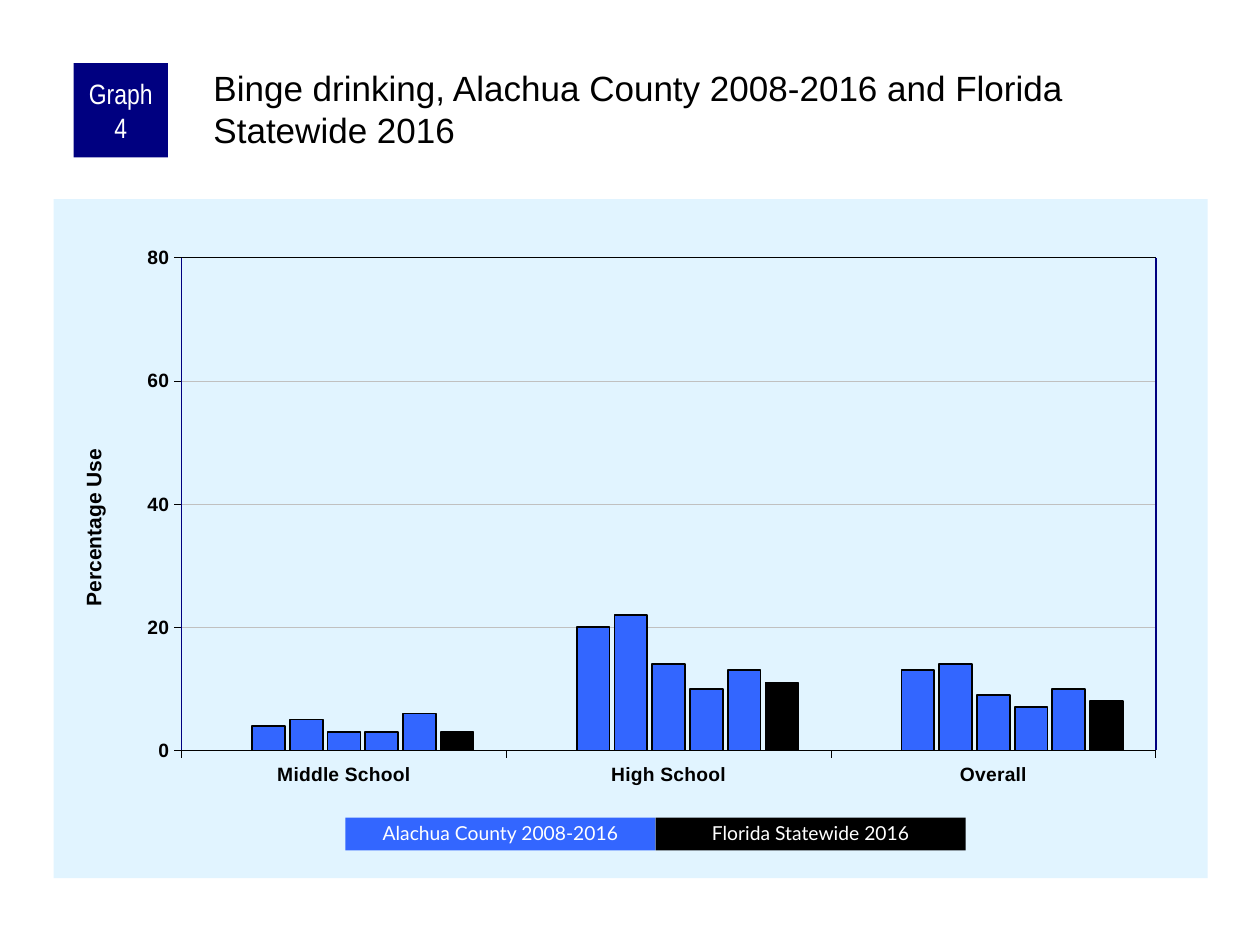
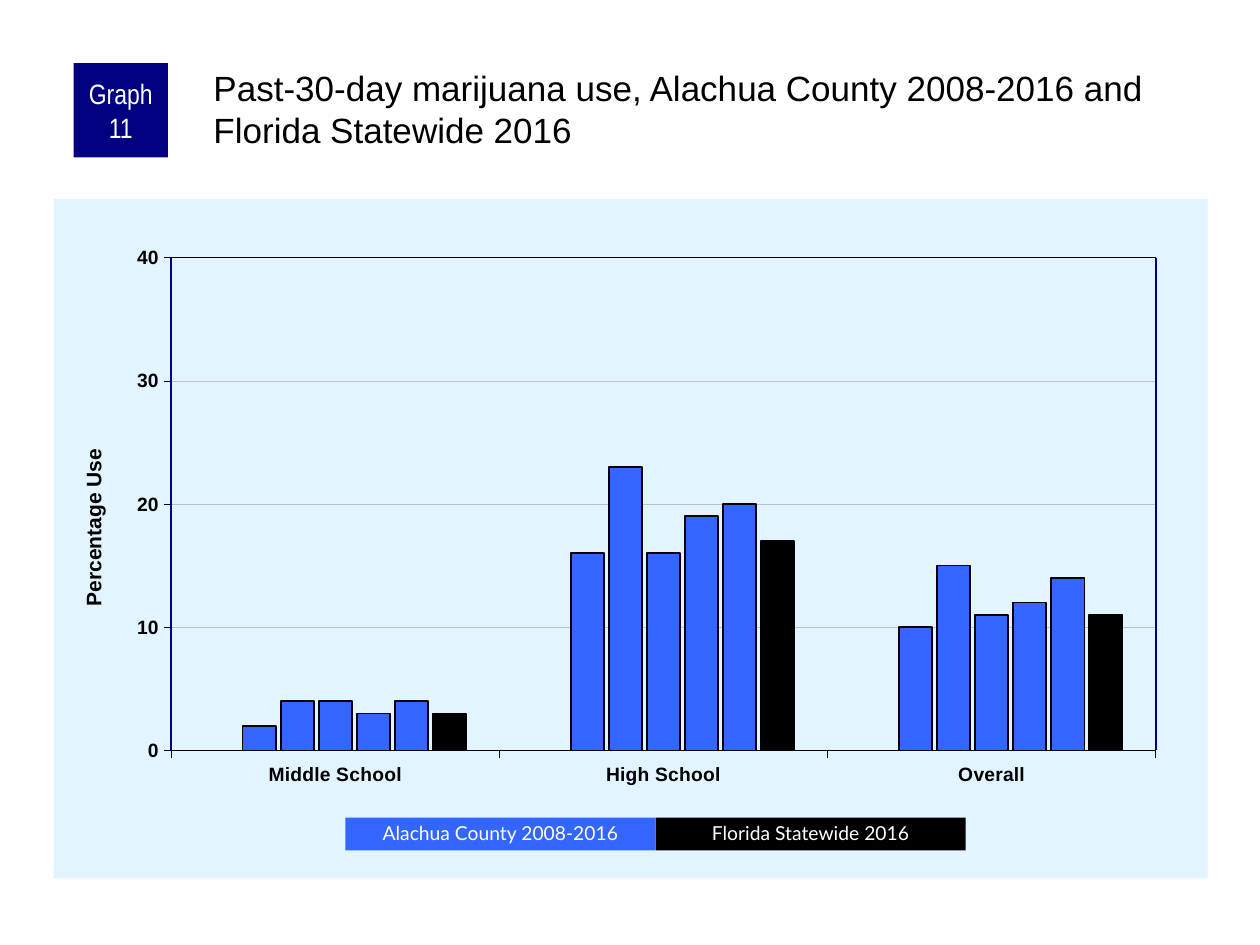
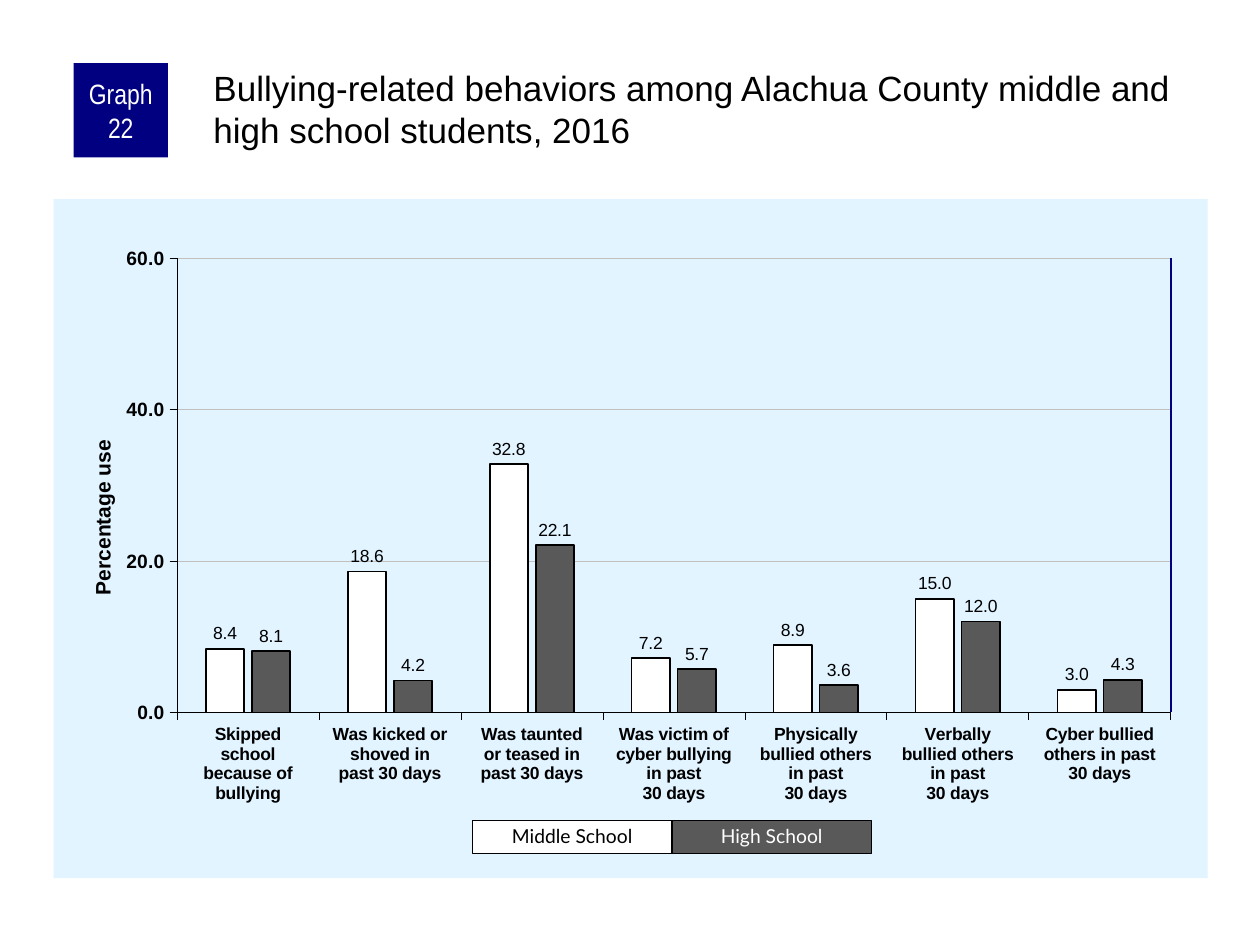
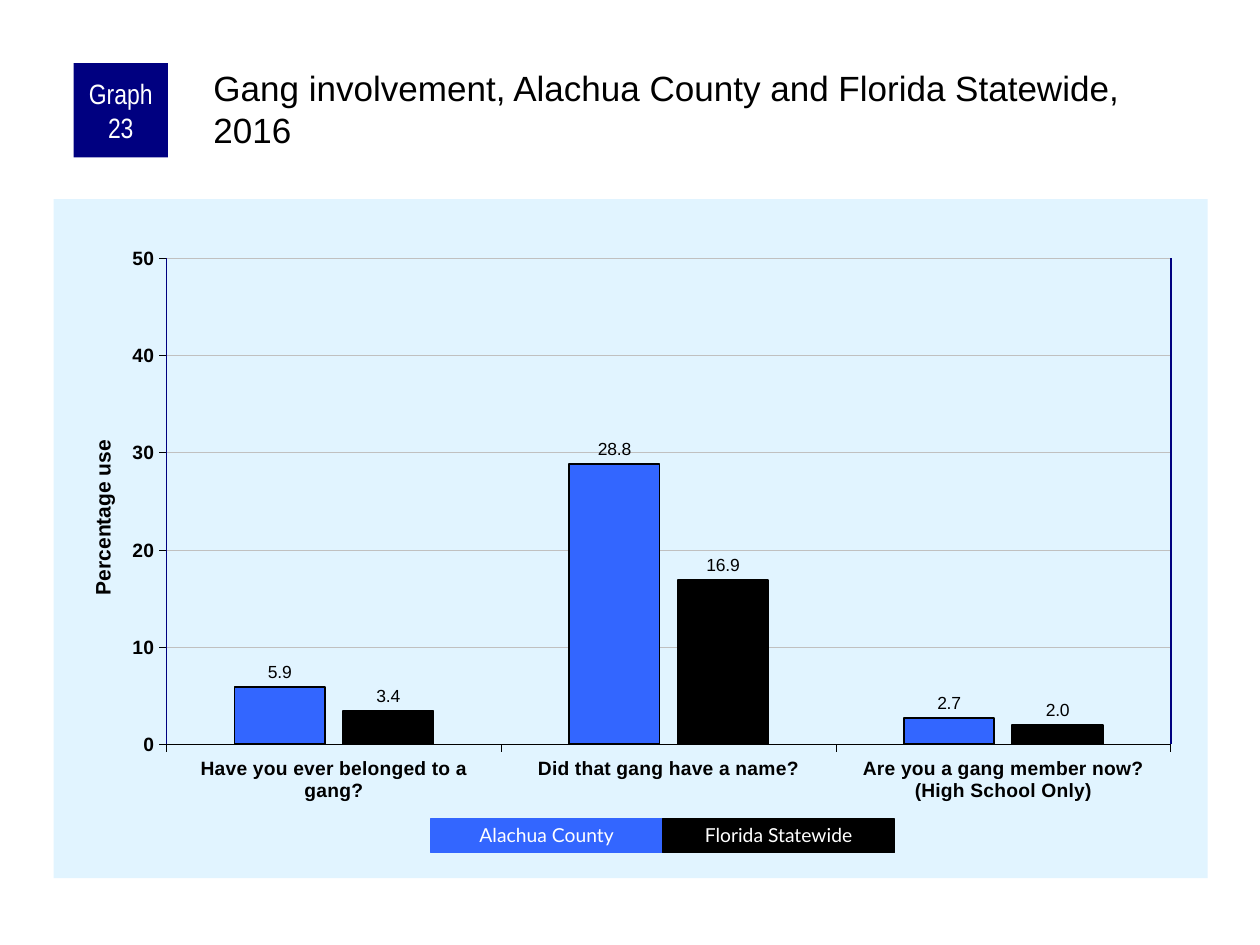
from lxml.etree import SubElement
from pptx import Presentation
from pptx.chart.data import CategoryChartData
from pptx.dml.color import RGBColor
from pptx.enum.chart import XL_CHART_TYPE, XL_LABEL_POSITION, XL_TICK_MARK
from pptx.enum.shapes import MSO_CONNECTOR, MSO_SHAPE
from pptx.enum.text import MSO_ANCHOR, PP_ALIGN
from pptx.oxml import parse_xml
from pptx.oxml.ns import nsdecls, qn
from pptx.util import Pt

COLORS = {
    "navy": "000080",
    "blue": "3366FF",
    "pale": "E1F4FF",
    "grid": "C0C0C0",
    "gray": "595959",
    "black": "000000",
    "white": "FFFFFF",
}

# Content: settings shared by the trend graphs and by the 2016 graphs
SCHOOLS = ["Middle School", "High School", "Overall"]
TREND = dict(
    categories=SCHOOLS, category_size=11, axis_title="Percentage Use", title_at=(0.02, 0.362),
    gap=200, overlap=-15, font_size=8, labels=False, axis_format="0",
    edges={"left": "navy", "right": "navy", "top": "black"},
    bar_colors=["blue"] * 6 + ["black"],
    legend=[("Alachua County 2008-2016", "blue", "white", None),
            ("Florida Statewide 2016", "black", "white", None)],
    legend_box=(197.4, 467.2, 177.2, 18.7),
)
YEAR_2016 = dict(
    axis_title="Percentage use", title_at=(0.028, 0.349),
    gap=150, overlap=-20, font_size=11.5, labels=True,
)

GRAPHS = [
    dict(
        TREND, number=4,
        heading="Binge drinking, Alachua County 2008-2016 and Florida Statewide 2016",
        top_value=80, step=20, plot=(0.111, 0.086, 0.844, 0.726),
        values=[(0, 0, 0), (4, 20, 13), (5, 22, 14), (3, 14, 9), (3, 10, 7), (6, 13, 10), (3, 11, 8)],
    ),
    dict(
        TREND, number=11,
        heading="Past-30-day marijuana use, Alachua County 2008-2016 and Florida Statewide 2016",
        top_value=40, step=10, plot=(0.102, 0.086, 0.853, 0.726),
        values=[(0, 0, 0), (2, 16, 10), (4, 23, 15), (4, 16, 11), (3, 19, 12), (4, 20, 14), (3, 17, 11)],
    ),
    dict(
        YEAR_2016, number=22,
        heading="Bullying-related behaviors among Alachua County middle and high school students, 2016",
        categories=["Skipped\nschool\nbecause of\nbullying",
                    "Was kicked or\nshoved in\npast 30 days",
                    "Was taunted\nor teased in\npast 30 days",
                    "Was victim of\ncyber bullying\nin past\n30 days",
                    "Physically\nbullied others\nin past\n30 days",
                    "Verbally\nbullied others\nin past\n30 days",
                    "Cyber bullied\nothers in past\n30 days"],
        category_size=10, axis_format="0.0", edges={"right": "navy"},
        top_value=60, step=20, plot=(0.107, 0.087, 0.861, 0.669),
        values=[(8.4, 18.6, 32.8, 7.2, 8.9, 15, 3), (8.1, 4.2, 22.1, 5.7, 3.6, 12, 4.3)],
        bar_colors=["white", "gray"],
        legend=[("Middle School", "white", "black", "black"),
                ("High School", "gray", "white", "black")],
        legend_box=(270, 468.7, 114, 19.2),
    ),
    dict(
        YEAR_2016, number=23,
        heading="Gang involvement, Alachua County and Florida Statewide, 2016",
        categories=["Have you ever belonged to a gang?", "Did that gang have a name?",
                    "Are you a gang member now?\n(High School Only)"],
        category_size=11, axis_format="0", edges={"left": "navy", "right": "navy"},
        top_value=50, step=10, plot=(0.098, 0.087, 0.87, 0.716),
        values=[(5.9, 28.8, 2.7), (3.4, 16.9, 2)],
        bar_colors=["blue", "black"],
        legend=[("Alachua County", "blue", "white", "blue"),
                ("Florida Statewide", "black", "white", "black")],
        legend_box=(246.2, 468, 132.5, 19.2),
    ),
]

# Frame shared by every slide, in points: left, top, width, height
SLIDE_SIZE = (720, 540)
BADGE_BOX = (42, 36, 54, 54)
HEADING_BOX = (120, 36, 570, 60)
CHART_BOX = (30.6, 113.8, 659.5, 388)


def rgb(name):
    return RGBColor.from_string(COLORS[name])


def paint_line(line, color, width):
    line.color.rgb = rgb(color)
    line.width = Pt(width)


def style_font(font, size, bold=False, color="black", name="Arial"):
    font.name, font.size, font.bold = name, Pt(size), bold
    font.color.rgb = rgb(color)


def add_text(slide, text, box, *, fill=None, line=None, size=11, color="black", font="Arial",
             align=PP_ALIGN.CENTER, anchor=MSO_ANCHOR.MIDDLE, insets=(7.2, 3.6, 7.2, 3.6), spacing=None):
    place = [Pt(length) for length in box]
    if fill:
        shape = slide.shapes.add_shape(MSO_SHAPE.RECTANGLE, *place)
        shape.shadow.inherit = False
        shape.fill.solid()
        shape.fill.fore_color.rgb = rgb(fill)
        if line:
            paint_line(shape.line, line, 0.75)
        else:
            shape.line.fill.background()
    else:
        shape = slide.shapes.add_textbox(*place)
    frame = shape.text_frame
    frame.word_wrap = True
    frame.vertical_anchor = anchor
    frame.margin_left, frame.margin_top, frame.margin_right, frame.margin_bottom = map(Pt, insets)
    paragraph = frame.paragraphs[0]
    paragraph.alignment = align
    paragraph.line_spacing = spacing
    run = paragraph.add_run()
    run.text = text
    style_font(run.font, size, None, color, font)


def set_layout(parent, fractions, inner=False):
    """Place a chart part by fractions of the chart: x, y and, if given, w, h."""
    layout = parent.find(qn("c:layout"))
    if layout is None:
        layout = parse_xml(f"<c:layout {nsdecls('c')}/>")
        parent.insert(0, layout)
    for child in list(layout):
        layout.remove(child)
    manual = SubElement(layout, qn("c:manualLayout"))
    settings = [("layoutTarget", "inner")] if inner else []
    settings += [("xMode", "edge"), ("yMode", "edge"), *zip("xywh", fractions)]
    for tag, value in settings:
        SubElement(manual, qn(f"c:{tag}")).set("val", str(value))


def style_axis(axis, size):
    style_font(axis.tick_labels.font, size, bold=True)
    axis.major_tick_mark = XL_TICK_MARK.OUTSIDE
    axis.minor_tick_mark = XL_TICK_MARK.NONE
    paint_line(axis.format.line, "black", 0.25)


def add_graph(slide, graph):
    data = CategoryChartData()
    data.categories = graph["categories"]
    for number, values in enumerate(graph["values"], 1):
        data.add_series(f"Series {number}", values)
    chart = slide.shapes.add_chart(
        XL_CHART_TYPE.COLUMN_CLUSTERED, *[Pt(length) for length in CHART_BOX], data).chart
    chart.has_legend = chart.has_title = False
    style_font(chart.font, graph["font_size"])
    background = parse_xml(
        f'<c:spPr {nsdecls("c", "a")}><a:solidFill><a:srgbClr val="{COLORS["pale"]}"/></a:solidFill>'
        "<a:ln><a:noFill/></a:ln></c:spPr>")
    chart.element.find(qn("c:txPr")).addprevious(background)
    set_layout(chart.element.chart.plotArea, graph["plot"], inner=True)

    # Axes
    style_axis(chart.category_axis, graph["category_size"])
    axis = chart.value_axis
    style_axis(axis, 11)
    axis.minimum_scale, axis.maximum_scale, axis.major_unit = 0, graph["top_value"], graph["step"]
    axis.tick_labels.number_format = graph["axis_format"]
    axis.tick_labels.number_format_is_linked = False
    paint_line(axis.major_gridlines.format.line, "grid", 0.25)
    frame = axis.axis_title.text_frame
    frame.text = graph["axis_title"]
    style_font(frame.paragraphs[0].runs[0].font, 12, bold=True)
    title = axis.axis_title.element if hasattr(axis.axis_title, "element") else axis.axis_title._element
    body = title.find(".//" + qn("a:bodyPr"))
    body.set("rot", "-5400000")
    body.set("vert", "horz")
    set_layout(title, graph["title_at"])

    # Columns
    plot = chart.plots[0]
    plot.gap_width, plot.overlap, plot.vary_by_categories = graph["gap"], graph["overlap"], False
    for series, color in zip(plot.series, graph["bar_colors"]):
        series.invert_if_negative = False
        series.format.fill.solid()
        series.format.fill.fore_color.rgb = rgb(color)
        paint_line(series.format.line, "black", 1)
        if graph["labels"]:
            labels = series.data_labels
            labels.show_value = True
            labels.number_format, labels.number_format_is_linked = "0.0", False
            labels.position = XL_LABEL_POSITION.OUTSIDE_END
            style_font(labels.font, 10)


def add_plot_edges(slide, graph):
    chart_left, chart_top, chart_width, chart_height = CHART_BOX
    x, y, width, height = graph["plot"]
    left, right = chart_left + x * chart_width, chart_left + (x + width) * chart_width
    top, bottom = chart_top + y * chart_height, chart_top + (y + height) * chart_height
    ends = {"left": (left, top, left, bottom), "right": (right, top, right, bottom),
            "top": (left, top, right, top)}
    for side, color in graph["edges"].items():
        edge = slide.shapes.add_connector(MSO_CONNECTOR.STRAIGHT, *[Pt(end) for end in ends[side]])
        paint_line(edge.line, color, 0.5 if side == "top" else 1)
        SubElement(edge._element.spPr, qn("a:effectLst"))


def add_legend(slide, graph):
    left, top, width, height = graph["legend_box"]
    for position, (label, fill, color, line) in enumerate(graph["legend"]):
        add_text(slide, label, (left + position * width, top, width, height),
                 fill=fill, line=line, color=color, font="Lato", spacing=0.9)


def main():
    deck = Presentation()
    deck.slide_width, deck.slide_height = map(Pt, SLIDE_SIZE)
    for graph in GRAPHS:
        slide = deck.slides.add_slide(deck.slide_layouts[6])
        add_graph(slide, graph)
        add_plot_edges(slide, graph)
        add_text(slide, f"Graph {graph['number']}", BADGE_BOX, fill="navy", size=16, color="white",
                 font="Arial Narrow", insets=(3.6, 0, 3.6, 0))
        add_text(slide, graph["heading"], HEADING_BOX, size=20, align=PP_ALIGN.LEFT,
                 anchor=MSO_ANCHOR.TOP, insets=(2, 2, 0, 0))
        add_legend(slide, graph)
    deck.save("out.pptx")


if __name__ == "__main__":
    main()
